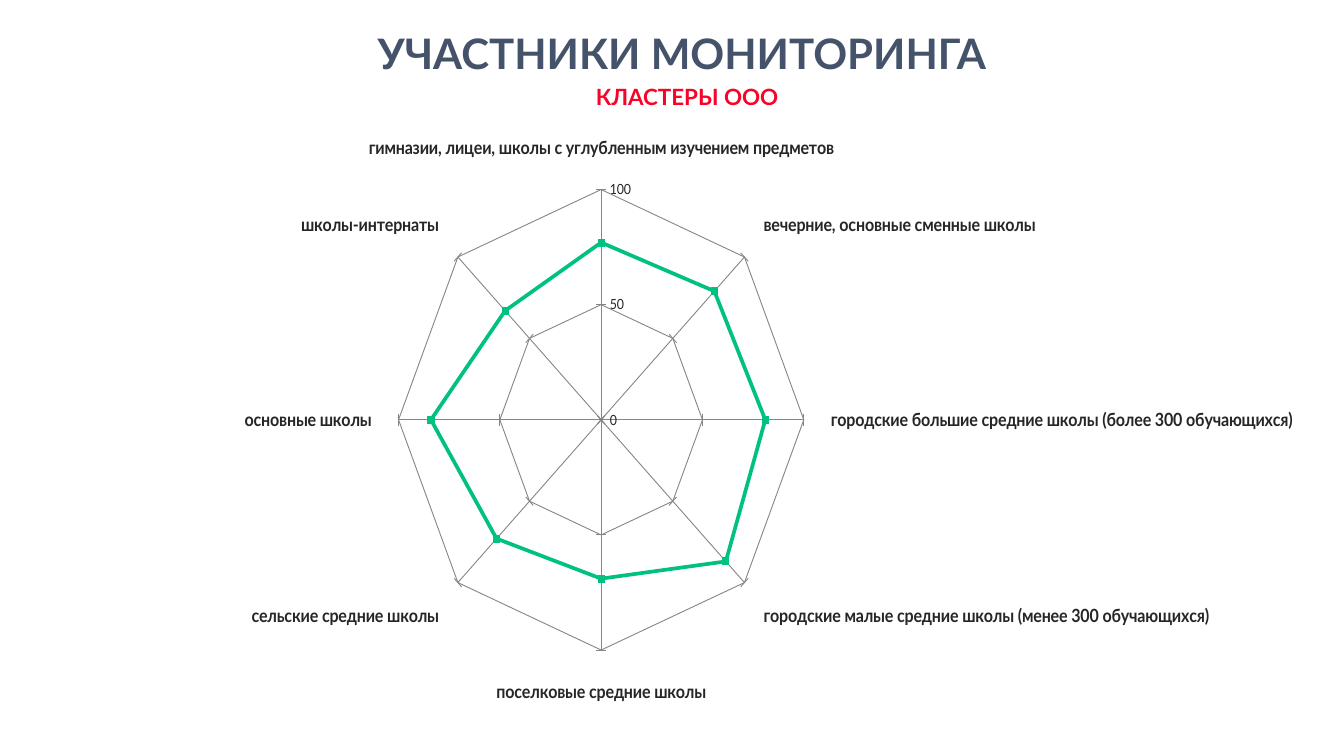
from lxml import etree
from pptx import Presentation
from pptx.chart.data import CategoryChartData
from pptx.dml.color import RGBColor
from pptx.enum.chart import XL_CHART_TYPE as ChartType, XL_MARKER_STYLE as Marker, XL_TICK_MARK as Tick
from pptx.enum.text import MSO_ANCHOR as Anchor, MSO_AUTO_SIZE as AutoSize, PP_ALIGN as Align
from pptx.oxml.ns import qn
from pptx.util import Inches, Pt

FONT = "Lato"
NAVY = RGBColor(0x44, 0x53, 0x6A)
RED = RGBColor(0xF9, 0x03, 0x29)
GREEN = RGBColor(0x00, 0xC1, 0x80)
DARK = RGBColor(0x26, 0x26, 0x26)
GRAY = RGBColor(0x86, 0x86, 0x86)

TITLE = "УЧАСТНИКИ МОНИТОРИНГА"
SUBTITLE = "КЛАСТЕРЫ ООО"
CLUSTERS = [
    ("гимназии, лицеи, школы с углубленным изучением предметов", 77),
    ("вечерние, основные сменные школы", 79),
    ("городские большие средние школы (более 300 обучающихся)", 81),
    ("городские малые средние школы (менее 300 обучающихся)", 87),
    ("поселковые средние школы", 69),
    ("сельские средние школы", 73),
    ("основные школы", 84),
    ("школы-интернаты", 67),
]
TITLE_BOX = (0.48, -0.03, 12.57, 0.76)
SUBTITLE_BOX = (1.23, 0.78, 11.17, 0.37)
CHART_BOX = (0.72, 1.34, 12.16, 5.88)
PLOT_LAYOUT = {
    "layoutTarget": "inner", "xMode": "edge", "yMode": "edge",
    "x": 0.297, "y": 0.092, "w": 0.386, "h": 0.777,
}


def format_font(font, size, color, bold=False):
    """Apply the slide font with the given size, colour and weight."""
    font.name, font.size, font.bold = FONT, Pt(size), bold
    font.color.rgb = color


def write_text(sp, text, size, color, box, spacing=1.0):
    """Place a shape and fill it with one centred bold line."""
    sp.left, sp.top, sp.width, sp.height = map(Inches, box)
    tf = sp.text_frame
    tf.word_wrap = True
    tf.auto_size = AutoSize.NONE
    tf.vertical_anchor = Anchor.TOP
    p = tf.paragraphs[0]
    p.alignment, p.line_spacing = Align.CENTER, spacing
    r = p.add_run()
    r.text = text
    format_font(r.font, size, color, bold=True)


def set_plot_layout(chart, values):
    """Fix the inner plot area at fractions of the chart frame."""
    plot_area = chart.plots[0]._element.getparent()
    for old in plot_area.findall(qn("c:layout")):
        plot_area.remove(old)
    layout = etree.Element(qn("c:layout"))
    manual = etree.SubElement(layout, qn("c:manualLayout"))
    for name, value in values.items():
        etree.SubElement(manual, qn(f"c:{name}")).set("val", str(value))
    plot_area.insert(0, layout)


def format_line(line, color, width):
    """Set the colour and width of a line."""
    line.color.rgb = color
    line.width = Pt(width)


def add_radar(s):
    """Add the radar chart of school clusters."""
    data = CategoryChartData(number_format="General")
    data.categories = [name for name, _ in CLUSTERS]
    data.add_series("Series 1", [value for _, value in CLUSTERS])
    chart = s.shapes.add_chart(
        ChartType.RADAR_MARKERS, *map(Inches, CHART_BOX), data).chart
    chart.has_legend = chart.has_title = False
    format_font(chart.font, 18, DARK)
    chart.plots[0].vary_by_categories = False
    set_plot_layout(chart, PLOT_LAYOUT)

    axes = [(chart.category_axis, 13, True, Tick.OUTSIDE),
            (chart.value_axis, 10, False, Tick.CROSS)]
    for axis, size, bold, tick in axes:
        axis.has_major_gridlines = True
        axis.major_tick_mark, axis.minor_tick_mark = tick, Tick.NONE
        axis.tick_labels.number_format = "General"
        axis.tick_labels.number_format_is_linked = False
        format_font(axis.tick_labels.font, size, DARK, bold)
        format_line(axis.format.line, GRAY, 0.75)
        format_line(axis.major_gridlines.format.line, GRAY, 0.75)
    value_axis = chart.value_axis
    value_axis.minimum_scale, value_axis.maximum_scale = 0, 100
    value_axis.major_unit = 50

    series = chart.plots[0].series[0]
    series.smooth = False
    format_line(series.format.line, GREEN, 3)
    marker = series.marker
    marker.style, marker.size = Marker.SQUARE, 5
    marker.format.fill.solid()
    marker.format.fill.fore_color.rgb = GREEN
    marker.format.line.color.rgb = GREEN


def main():
    """Build the slide and save it."""
    prs = Presentation()
    prs.slide_width, prs.slide_height = Inches(13.33), Inches(7.5)
    s = prs.slides.add_slide(prs.slide_layouts[5])
    write_text(s.shapes.title, TITLE, 30, NAVY, TITLE_BOX, spacing=1.5)
    subtitle = s.shapes.add_textbox(*map(Inches, SUBTITLE_BOX))
    write_text(subtitle, SUBTITLE, 16, RED, SUBTITLE_BOX)
    add_radar(s)
    prs.save("out.pptx")


if __name__ == "__main__":
    main()
